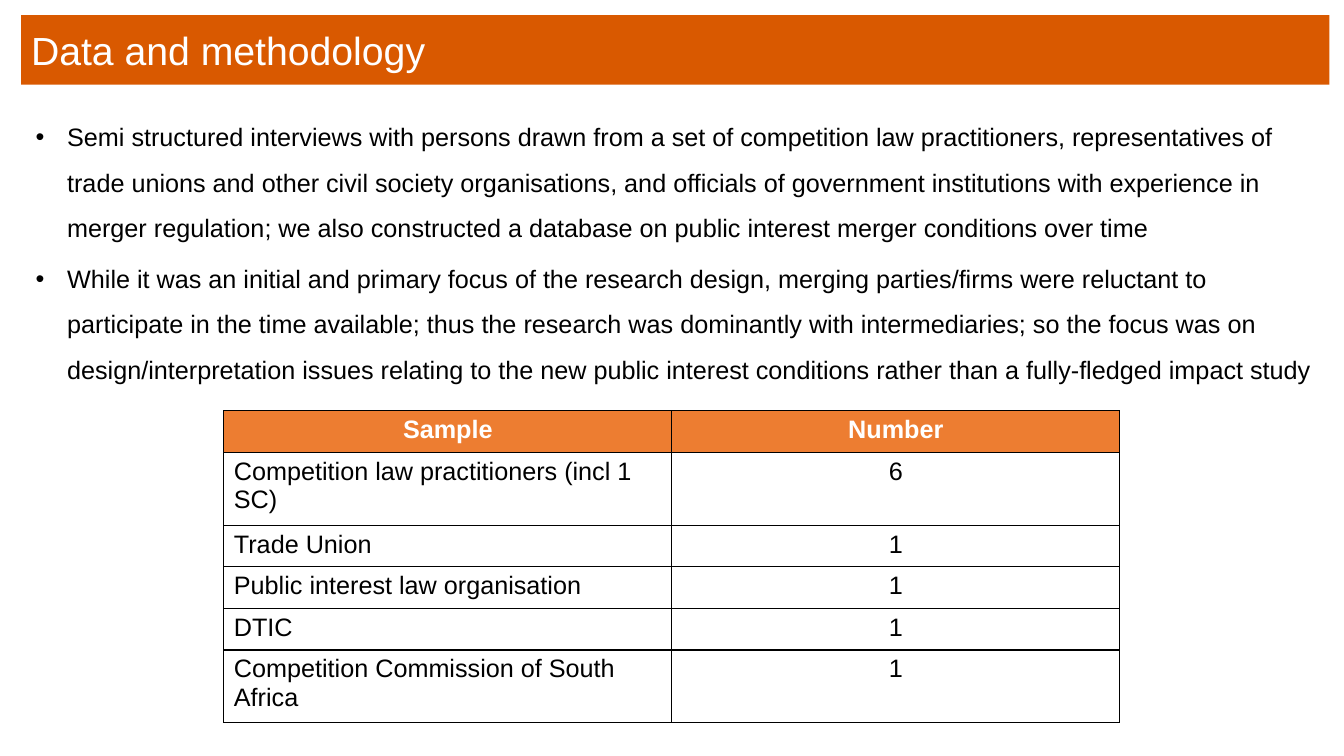
from dataclasses import dataclass

from lxml.etree import SubElement
from pptx import Presentation
from pptx.dml.color import RGBColor
from pptx.enum.shapes import MSO_SHAPE as Shape
from pptx.enum.text import MSO_ANCHOR as Anchor, PP_ALIGN as Align
from pptx.oxml.ns import qn
from pptx.util import Pt

TITLE = "Data and methodology"
BULLETS = [
    "Semi structured interviews with persons drawn from a set of competition law practitioners, "
    "representatives of trade unions and other civil society organisations, and officials of "
    "government institutions with experience in merger regulation; we also constructed a database "
    "on public interest merger conditions over time",
    "While it was an initial and primary focus of the research design, merging parties/firms were "
    "reluctant to participate in the time available; thus the research was dominantly with "
    "intermediaries; so the focus was on design/interpretation issues relating to the new public "
    "interest conditions rather than a fully-fledged impact study",
]
SAMPLE = [
    ("Sample", "Number"),
    ("Competition law practitioners (incl 1 SC)", "6"),
    ("Trade Union", "1"),
    ("Public interest law organisation", "1"),
    ("DTIC", "1"),
    ("Competition Commission of South Africa", "1"),
]
TWO_LINE_ROWS = {1, 5}


@dataclass(frozen=True)
class Theme:
    font: str = "Arial"
    title_size: float = 28
    body_size: float = 18
    banner: str = "D95900"
    header: str = "ED7D31"
    light: str = "FFFFFF"
    dark: str = "000000"


THEME = Theme()


def paint(fill, color):
    fill.solid()
    fill.fore_color.rgb = RGBColor.from_string(color)


def write(paragraph, text, size=THEME.body_size, color=THEME.dark, bold=False, align=Align.LEFT):
    paragraph.alignment = align
    run = paragraph.add_run()
    run.text = text
    run.font.name = THEME.font
    run.font.size = Pt(size)
    run.font.bold = bold
    run.font.color.rgb = RGBColor.from_string(color)


def add_bullet(paragraph, indent=22.5):
    properties = paragraph._p.get_or_add_pPr()
    properties.set("marL", str(Pt(indent)))
    properties.set("indent", str(-Pt(indent)))
    SubElement(properties, qn("a:buFont"), typeface=THEME.font)
    SubElement(properties, qn("a:buChar"), char="•")


def add_borders(cell, width=1):
    properties = cell._tc.get_or_add_tcPr()
    for position, side in enumerate(("lnL", "lnR", "lnT", "lnB")):
        line = properties.makeelement(qn(f"a:{side}"), {"w": str(Pt(width))})
        fill = SubElement(line, qn("a:solidFill"))
        SubElement(fill, qn("a:srgbClr"), val=THEME.dark)
        properties.insert(position, line)


def add_body(slide):
    frame = slide.shapes.add_textbox(Pt(20.16), Pt(73.44), Pt(929.5), Pt(454.3)).text_frame
    frame.word_wrap = True
    frame.margin_left = frame.margin_right = Pt(5.3)
    frame.margin_top = frame.margin_bottom = Pt(2.7)
    for index, text in enumerate(BULLETS):
        paragraph = frame.add_paragraph() if index else frame.paragraphs[0]
        paragraph.line_spacing = 1.5
        paragraph.space_before = Pt(4)
        add_bullet(paragraph)
        write(paragraph, text)


def add_banner(slide):
    banner = slide.shapes.add_shape(Shape.RECTANGLE, Pt(15.1), Pt(10.8), Pt(934.5), Pt(49.7))
    banner.shadow.inherit = False
    banner.line.fill.background()
    paint(banner.fill, THEME.banner)
    banner.text_frame.vertical_anchor = Anchor.MIDDLE
    write(banner.text_frame.paragraphs[0], TITLE, size=THEME.title_size, color=THEME.light)


def add_sample_table(slide, row_height=29.75, tall_height=52):
    heights = [tall_height if row in TWO_LINE_ROWS else row_height for row in range(len(SAMPLE))]
    table = slide.shapes.add_table(
        len(SAMPLE), len(SAMPLE[0]), Pt(159.9), Pt(293.4), Pt(640), Pt(sum(heights))
    ).table
    table.horz_banding = False
    for row, (height, values) in enumerate(zip(heights, SAMPLE)):
        table.rows[row].height = Pt(height)
        is_header = row == 0
        for column, text in enumerate(values):
            cell = table.cell(row, column)
            if is_header:
                paint(cell.fill, THEME.header)
            else:
                cell.fill.background()
            add_borders(cell)
            write(
                cell.text_frame.paragraphs[0],
                text,
                color=THEME.light if is_header else THEME.dark,
                bold=is_header,
                align=Align.CENTER if is_header or column else Align.LEFT,
            )


def main():
    presentation = Presentation()
    presentation.slide_width, presentation.slide_height = Pt(960), Pt(540)
    slide = presentation.slides.add_slide(presentation.slide_layouts[6])
    add_body(slide)
    add_banner(slide)
    add_sample_table(slide)
    presentation.save("out.pptx")


if __name__ == "__main__":
    main()
